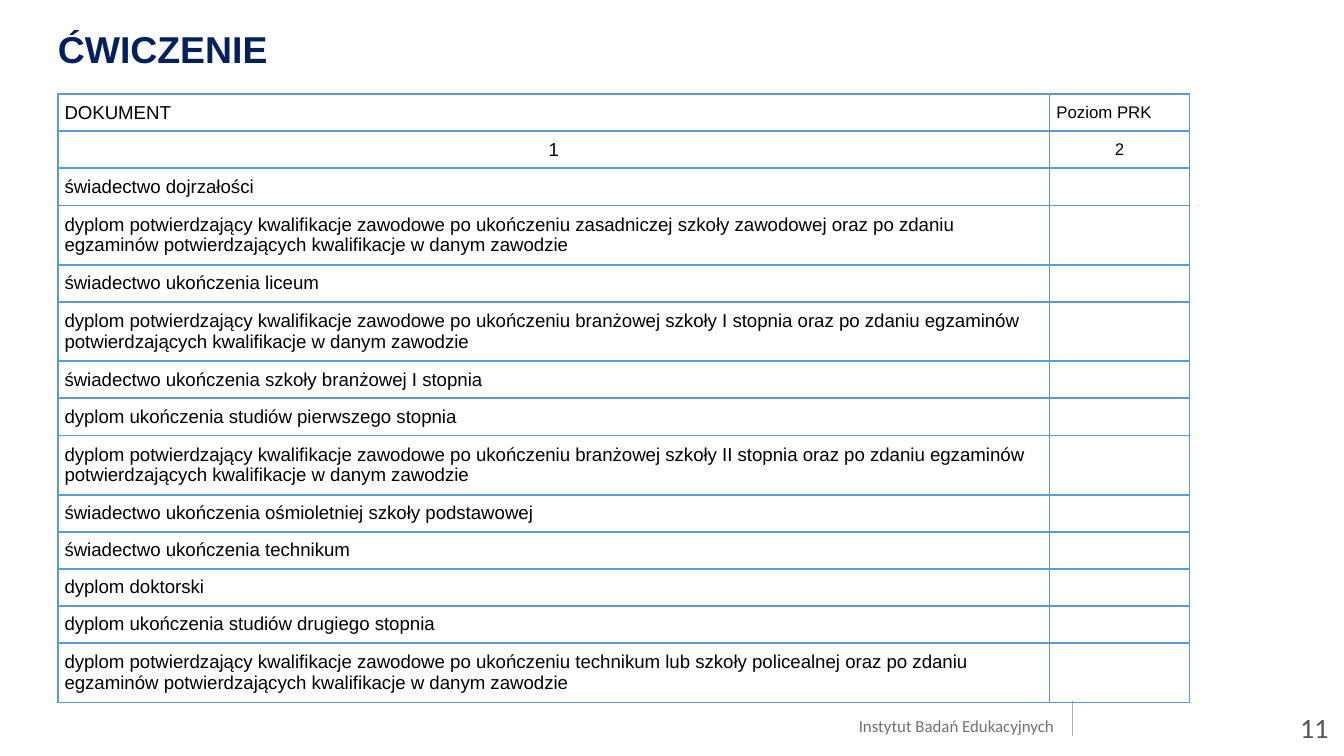
from lxml.etree import SubElement
from pptx import Presentation
from pptx.dml.color import RGBColor
from pptx.enum.shapes import MSO_CONNECTOR as Connector
from pptx.enum.text import MSO_ANCHOR as Anchor, MSO_AUTO_SIZE as AutoSize, PP_ALIGN as Align
from pptx.oxml.ns import qn
from pptx.util import Inches, Pt

COLORS = {"title": "002060", "text": "000000", "border": "5B9BD5",
          "footer": "757070", "divider": "AEABAB", "number": "535353"}
COLUMNS, ROWS = 100, 56.25
SLIDE_WIDTH = Inches(10)
SLIDE_HEIGHT = SLIDE_WIDTH * 9 // 16

TITLE_BOX = (4.3, 2.3, 80, 4.7)
TABLE_BOX = (4.3, 7, 84.2, 45.3)
FOOTER_BOX = (61.7, 52.15, 18.1, 2.6)
NUMBER_BOX = (93.55, 51.95, 6, 4.3)

VOCATIONAL = "dyplom potwierdzający kwalifikacje zawodowe po ukończeniu {} egzaminów potwierdzających kwalifikacje w danym zawodzie"
DOCUMENTS = [
    "świadectwo dojrzałości",
    VOCATIONAL.format("zasadniczej szkoły zawodowej oraz po zdaniu"),
    "świadectwo ukończenia liceum",
    VOCATIONAL.format("branżowej szkoły I stopnia oraz po zdaniu"),
    "świadectwo ukończenia szkoły branżowej I stopnia",
    "dyplom ukończenia studiów pierwszego stopnia",
    VOCATIONAL.format("branżowej szkoły II stopnia oraz po zdaniu"),
    "świadectwo ukończenia ośmioletniej szkoły podstawowej",
    "świadectwo ukończenia technikum",
    "dyplom doktorski",
    "dyplom ukończenia studiów drugiego stopnia",
    VOCATIONAL.format("technikum lub szkoły policealnej oraz po zdaniu"),
]
TABLE_ROWS = [("DOKUMENT", "Poziom PRK"), ("1", "2")] + [(name, "") for name in DOCUMENTS]
ROW_UNITS = [8 if len(name) > 100 else 5 for name, level in TABLE_ROWS]


def across(columns):
    return round(SLIDE_WIDTH * columns / COLUMNS)


def down(rows):
    return round(SLIDE_HEIGHT * rows / ROWS)


def place(box):
    left, top, width, height = box
    return across(left), down(top), across(width), down(height)


def apply(target, **values):
    for name, value in values.items():
        setattr(target, name, value)


def write(frame, text, color, size, font="Arial", bold=False, **paragraph_format):
    paragraph = frame.paragraphs[0]
    apply(paragraph, **paragraph_format)
    if not text:
        paragraph._p.get_or_add_endParaRPr().set("sz", str(size * 100))
        return
    run = paragraph.add_run()
    run.text = text
    apply(run.font, name=font, size=Pt(size), bold=bold)
    run.font.color.rgb = RGBColor.from_string(COLORS[color])


def set_frame(frame, anchor=Anchor.TOP, horizontal=0, vertical=0):
    apply(frame, word_wrap=True, auto_size=AutoSize.NONE, vertical_anchor=anchor,
          margin_left=Inches(horizontal), margin_right=Inches(horizontal),
          margin_top=Inches(vertical), margin_bottom=Inches(vertical))


def add_title(slide, box):
    title = slide.shapes.title
    apply(title, **dict(zip(("left", "top", "width", "height"), place(box))))
    set_frame(title.text_frame)
    write(title.text_frame, "ĆWICZENIE", "title", 20, bold=True,
          alignment=Align.LEFT, line_spacing=0.9)


def add_footer(slide, box):
    left, top, width, height = box
    label = slide.shapes.add_textbox(*place((left, top + 1.1, width - 1.4, 1.4)))
    set_frame(label.text_frame)
    write(label.text_frame, "Instytut Badań Edukacyjnych", "footer", 9, "Calibri",
          alignment=Align.RIGHT)
    x = across(left + width)
    divider = slide.shapes.add_connector(Connector.STRAIGHT, x, down(top + height), x, down(top))
    divider.line.color.rgb = RGBColor.from_string(COLORS["divider"])
    divider.line.width = Pt(0.75)
    SubElement(divider._element.spPr, qn("a:effectLst"))


def format_cell(cell):
    margin = Inches(0.05)
    apply(cell, vertical_anchor=Anchor.MIDDLE, margin_left=margin, margin_right=margin,
          margin_top=margin, margin_bottom=margin)
    properties = cell._tc.get_or_add_tcPr()
    for side in ("lnL", "lnR", "lnT", "lnB"):
        border = SubElement(properties, qn(f"a:{side}"), w=str(Pt(1)))
        fill = SubElement(border, qn("a:solidFill"))
        SubElement(fill, qn("a:srgbClr"), val=COLORS["border"])
    cell.fill.background()


def add_documents(slide, box):
    left, top, width, height = box
    table = slide.shapes.add_table(len(TABLE_ROWS), 2, *place(box)).table
    apply(table, first_row=False, horz_banding=False)
    level_width = 10.4
    table.columns[0].width = across(width - level_width)
    table.columns[1].width = across(level_width)
    for index, (values, units) in enumerate(zip(TABLE_ROWS, ROW_UNITS)):
        table.rows[index].height = down(height * units / sum(ROW_UNITS))
        alignment = Align.CENTER if index == 1 else Align.LEFT
        for column, (text, size) in enumerate(zip(values, (10, 9))):
            cell = table.cell(index, column)
            format_cell(cell)
            write(cell.text_frame, text, "text", size, alignment=alignment)


def add_number(slide, box):
    number = slide.shapes.add_textbox(*place(box))
    set_frame(number.text_frame, Anchor.MIDDLE, 0.07, 0.04)
    write(number.text_frame, "11", "number", 15, "Calibri", alignment=Align.RIGHT)


def main():
    presentation = Presentation()
    apply(presentation, slide_width=SLIDE_WIDTH, slide_height=SLIDE_HEIGHT)
    slide = presentation.slides.add_slide(presentation.slide_layouts[5])
    add_footer(slide, FOOTER_BOX)
    add_title(slide, TITLE_BOX)
    add_documents(slide, TABLE_BOX)
    add_number(slide, NUMBER_BOX)
    presentation.save("out.pptx")


if __name__ == "__main__":
    main()
